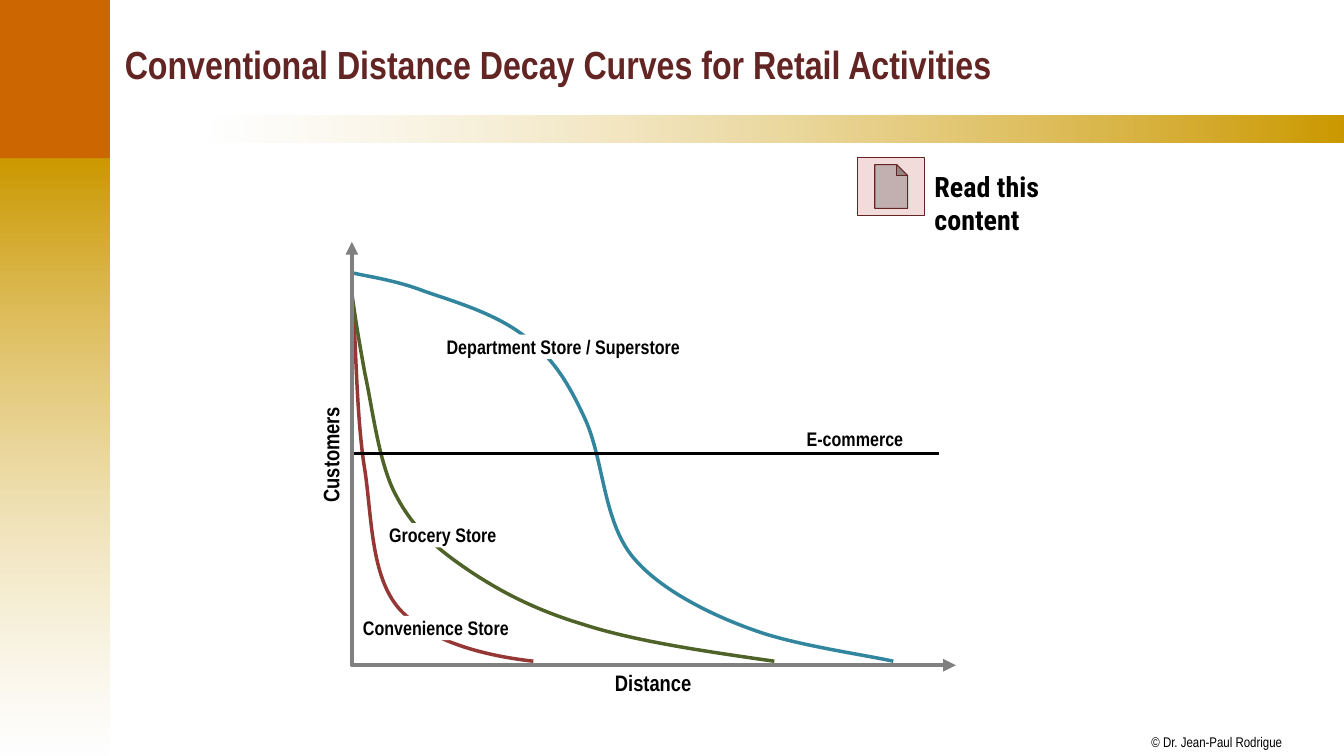
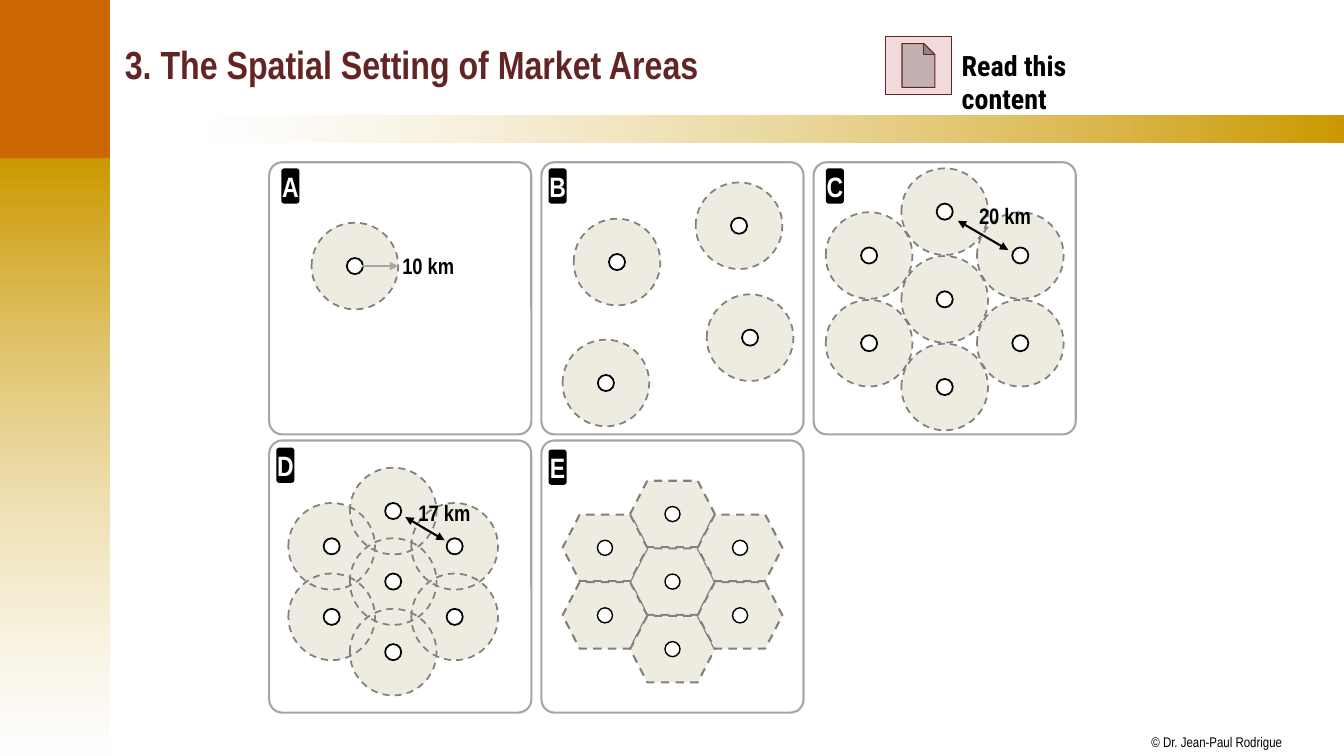
from dataclasses import dataclass
from typing import NamedTuple, Optional

import pptx
import pptx.dml.color
import pptx.enum.dml
import pptx.enum.shapes
import pptx.enum.text
import pptx.oxml
import pptx.oxml.ns
import pptx.slide
import pptx.util

Inches = pptx.util.Inches
Pt = pptx.util.Pt
qn = pptx.oxml.ns.qn
MSO_SHAPE = pptx.enum.shapes.MSO_SHAPE
ANCHOR = pptx.enum.text.MSO_ANCHOR
Slide = pptx.slide.Slide
Point = tuple[float, float]
Box = tuple[float, float, float, float]


@dataclass(frozen=True)
class Theme:
    font: str = "Arial Narrow"
    link_font: str = "Roboto Condensed"
    orange: str = "CC6600"
    gold: str = "CC9900"
    maroon: str = "632523"
    pink: str = "F2DCDB"
    black: str = "000000"
    white: str = "FFFFFF"
    area: str = "EEECE1"
    gray: str = "808080"
    light_gray: str = "A6A6A6"
    red: str = "953735"
    green: str = "4F6228"
    teal: str = "31859C"
    title_size: float = 28
    large_size: float = 20
    axis_size: float = 16
    label_size: float = 14
    footer_size: float = 10


THEME = Theme()


class Line(NamedTuple):
    color: str
    width: float
    dashed: bool = False
    head: bool = False
    tail: bool = False


class Label(NamedTuple):
    text: str
    box: Box
    size: float = THEME.axis_size
    fill: Optional[str] = None
    rotation: float = 0


class Curve(NamedTuple):
    """A start point followed by cubic Bézier points, three to a segment."""
    color: str
    points: list[Point]


class Panel(NamedTuple):
    letter: str
    column: int
    row: int
    badge_dx: float
    badge_dy: float


AREA_LINE = Line(THEME.gray, 1.25, dashed=True)
HEX_LINE = Line(THEME.gray, 1.5, dashed=True)
DISTANCE_LINE = Line(THEME.black, 1.5, head=True, tail=True)

CURVES = [
    Curve(THEME.red, [
        (3.51, 3.19), (3.53, 3.43), (3.54, 4.2), (3.62, 4.67),
        (3.69, 5.15), (3.68, 5.72), (3.96, 6.04),
        (4.24, 6.35), (4.76, 6.5), (5.29, 6.56)]),
    Curve(THEME.green, [
        (3.49, 2.91), (3.52, 3.14), (3.56, 3.38), (3.62, 3.71),
        (3.69, 4.03), (3.75, 4.54), (3.9, 4.86),
        (4.05, 5.17), (4.24, 5.37), (4.55, 5.59),
        (4.86, 5.81), (5.24, 6.03), (5.77, 6.19),
        (6.29, 6.36), (6.98, 6.46), (7.68, 6.56)]),
    Curve(THEME.teal, [
        (3.51, 2.71), (3.63, 2.74), (3.93, 2.78), (4.21, 2.89),
        (4.5, 2.99), (4.88, 3.1), (5.17, 3.31),
        (5.46, 3.53), (5.61, 3.74), (5.8, 4.15),
        (5.99, 4.56), (5.98, 5.17), (6.28, 5.53),
        (6.57, 5.88), (7.14, 6.14), (7.56, 6.28),
        (7.96, 6.41), (8.59, 6.5), (8.86, 6.56)]),
]
AXIS_LABELS = [
    Label("Distance", (6.1, 6.64, 0.76, 0.27)),
    Label("Customers", (2.8, 4.37, 0.96, 0.27), rotation=270),
]
CURVE_LABELS = [
    Label("Convenience Store", (3.6, 6.11, 1.46, 0.24), THEME.label_size, THEME.white),
    Label("Grocery Store", (3.86, 5.19, 1.07, 0.24), THEME.label_size, THEME.white),
    Label("Department Store / Superstore", (4.43, 3.32, 2.34, 0.24),
          THEME.label_size, THEME.white),
]
PANELS = [
    Panel("A", 0, 0, 0.12, 0.06),
    Panel("B", 1, 0, 0.07, 0.06),
    Panel("C", 2, 0, 0.12, 0.06),
    Panel("D", 0, 1, 0.07, 0.07),
    Panel("E", 1, 1, 0.07, 0.09),
]
SCATTERED = [(7.33, 2.24), (7.44, 3.35), (6.12, 2.6), (6.01, 3.8)]


def rgb(color: str) -> pptx.dml.color.RGBColor:
    return pptx.dml.color.RGBColor.from_string(color)


def style_line(sp, line: Optional[Line]) -> None:
    if line is None:
        sp.line.fill.background()
        return
    sp.line.color.rgb = rgb(line.color)
    sp.line.width = Pt(line.width)
    if line.dashed:
        sp.line.dash_style = pptx.enum.dml.MSO_LINE.DASH
    for tag, shown in (("a:headEnd", line.head), ("a:tailEnd", line.tail)):
        if shown:
            end = pptx.oxml.parse_xml(f"<{tag} {pptx.oxml.ns.nsdecls('a')} type='triangle'/>")
            sp.get_or_add_ln().append(end)


def style_shape(sp, fill: Optional[str], line: Optional[Line]) -> None:
    sp.shadow.inherit = False
    if fill:
        sp.fill.solid()
        sp.fill.fore_color.rgb = rgb(fill)
    else:
        sp.fill.background()
    style_line(sp, line)


def add_shape(s: Slide, kind, box: Box, fill: Optional[str] = None,
              line: Optional[Line] = None):
    sp = s.shapes.add_shape(kind, *map(Inches, box))
    style_shape(sp, fill, line)
    return sp


def add_outline(s: Slide, points: list[Point], fill: Optional[str], line: Line,
                close: bool = False):
    vertices = [(Inches(x), Inches(y)) for x, y in points]
    builder = s.shapes.build_freeform(*vertices[0])
    builder.add_line_segments(vertices[1:], close=close)
    sp = builder.convert_to_shape()
    style_shape(sp, fill, line)
    return sp


def add_curve(s: Slide, curve: Curve) -> None:
    """Turn each three straight segments of an outline into one cubic segment."""
    sp = add_outline(s, curve.points, None, Line(curve.color, 2.5))
    segments = list(sp._element.iter(qn("a:lnTo")))
    for i in range(0, len(segments), 3):
        first, *others = segments[i:i + 3]
        first.tag = qn("a:cubicBezTo")
        for other in others:
            first.append(other[0])
            other.getparent().remove(other)


def add_straight(s: Slide, start: Point, end: Point, line: Line) -> None:
    kind = pptx.enum.shapes.MSO_CONNECTOR.STRAIGHT
    sp = s.shapes.add_connector(kind, *map(Inches, start + end))
    style_line(sp, line)
    effects = pptx.oxml.parse_xml(f"<a:effectLst {pptx.oxml.ns.nsdecls('a')}/>")
    sp._element.spPr.append(effects)


def set_text(sp, text: str, size: float, color: str = THEME.black,
             font: str = THEME.font, bold: bool = True):
    p = sp.text_frame.paragraphs[0]
    p.text = text
    p.font.name, p.font.size, p.font.bold = font, Pt(size), bold
    p.font.color.rgb = rgb(color)
    return p


def fit_tightly(sp) -> None:
    """Remove insets and wrapping, and let the shape follow its text."""
    tf = sp.text_frame
    tf.margin_left = tf.margin_top = tf.margin_right = tf.margin_bottom = 0
    tf.word_wrap = False
    tf.auto_size = pptx.enum.text.MSO_AUTO_SIZE.SHAPE_TO_FIT_TEXT


def add_label(s: Slide, label: Label, bold: bool = True) -> None:
    sp = s.shapes.add_textbox(*map(Inches, label.box))
    if label.fill:
        sp.fill.solid()
        sp.fill.fore_color.rgb = rgb(label.fill)
    sp.rotation = label.rotation
    fit_tightly(sp)
    set_text(sp, label.text, label.size, bold=bold)


def add_gradient(s: Slide, box: Box, angle: float, stops: list[tuple[str, int]]) -> None:
    """Draw a two-stop band; each stop is a colour and its opacity in percent."""
    sp = add_shape(s, MSO_SHAPE.RECTANGLE, box)
    sp.fill.gradient()
    sp.fill.gradient_angle = angle
    for stop, gs, (color, opacity) in zip(
            sp.fill.gradient_stops, sp._element.iter(qn("a:gs")), stops):
        stop.color.rgb = rgb(color)
        if opacity < 100:
            gs[0].append(pptx.oxml.parse_xml(
                f"<a:alpha {pptx.oxml.ns.nsdecls('a')} val='{opacity * 1000}'/>"))


def add_titled_slide(prs, title: str) -> Slide:
    s = prs.slides.add_slide(prs.slide_layouts[6])
    add_gradient(s, (-0.02, 1.57, 1.11, 5.93), 270, [(THEME.gold, 100), (THEME.white, 51)])
    add_gradient(s, (2.09, 1.15, 11.25, 0.26), 0, [(THEME.white, 50), (THEME.gold, 100)])
    add_label(s, Label("© Dr. Jean-Paul Rodrigue", (11.42, 7.28, 1.31, 0.17),
                       THEME.footer_size), bold=False)
    add_shape(s, MSO_SHAPE.RECTANGLE, (-0.02, -0.01, 1.11, 1.58), THEME.orange)
    sp = s.shapes.add_textbox(*map(Inches, (1.14, 0.11, 11.97, 1.04)))
    sp.text_frame.word_wrap = True
    sp.text_frame.vertical_anchor = ANCHOR.MIDDLE
    set_text(sp, title, THEME.title_size, THEME.maroon)
    return s


def add_read_button(s: Slide, x: float, y: float) -> None:
    add_shape(s, MSO_SHAPE.ACTION_BUTTON_DOCUMENT, (x, y, 0.66, 0.58),
              THEME.pink, Line(THEME.maroon, 0.75))
    sp = s.shapes.add_textbox(*map(Inches, (x + 0.66, y + 0.07, 1.86, 0.44)))
    sp.text_frame.word_wrap = True
    set_text(sp, "Read this content", THEME.large_size, font=THEME.link_font)


def add_circle(s: Slide, center: Point, size: float, fill: Optional[str],
               line: Optional[Line]) -> None:
    x, y = center
    add_shape(s, MSO_SHAPE.OVAL, (x - size / 2, y - size / 2, size, size), fill, line)


def add_market(s: Slide, center: Point, fill: Optional[str] = THEME.area) -> None:
    add_circle(s, center, 0.86, fill, AREA_LINE)
    add_circle(s, center, 0.16, THEME.white, Line(THEME.black, 1.25))


def add_hexagon_market(s: Slide, center: Point) -> None:
    x, y = center
    corners = [(-0.25, -0.33), (-0.42, 0), (-0.25, 0.33), (0.25, 0.33), (0.42, 0), (0.25, -0.33)]
    add_outline(s, [(x + dx, y + dy) for dx, dy in corners], THEME.area, HEX_LINE, close=True)
    add_circle(s, center, 0.15, THEME.white, Line(THEME.black, 1))


def ring_of_six(center: Point, dx: float, dy: float) -> list[Point]:
    """Centres of a middle market and its six neighbours."""
    x, y = center
    steps = [(0, -1), (0, 0), (-1, -0.5), (-1, 0.5), (0, 1), (1, 0.5), (1, -0.5)]
    return [(x + column * dx, y + row * dy) for column, row in steps]


def add_panel(s: Slide, panel: Panel) -> None:
    x, y = 2.67 + 2.7 * panel.column, 1.61 + 2.76 * panel.row
    sp = add_shape(s, MSO_SHAPE.ROUNDED_RECTANGLE, (x, y, 2.6, 2.7),
                   line=Line(THEME.light_gray, 1.5))
    sp.adjustments[0] = 0.05
    badge = add_shape(s, MSO_SHAPE.ROUNDED_RECTANGLE,
                      (x + panel.badge_dx, y + panel.badge_dy, 0.18, 0.35), THEME.black)
    fit_tightly(badge)
    p = set_text(badge, panel.letter, THEME.large_size, THEME.white)
    p.alignment = pptx.enum.text.PP_ALIGN.CENTER


def build_decay_curves(prs) -> None:
    s = add_titled_slide(prs, "Conventional Distance Decay Curves for Retail Activities")
    add_read_button(s, 8.51, 1.56)
    for label in AXIS_LABELS:
        add_label(s, label)
    for curve in CURVES:
        add_curve(s, curve)
    add_outline(s, [(3.49, 2.4), (3.49, 6.6), (9.48, 6.6)], None,
                Line(THEME.gray, 3, head=True, tail=True))
    for label in CURVE_LABELS:
        add_label(s, label)
    add_straight(s, (3.51, 4.5), (9.31, 4.5), Line(THEME.black, 2.5))
    add_label(s, Label("E-commerce", (8, 4.24, 0.97, 0.24), THEME.label_size))


def build_market_areas(prs) -> None:
    s = add_titled_slide(prs, "3. The Spatial Setting of Market Areas")
    add_read_button(s, 8.78, 0.36)
    overlapping = ring_of_six((3.9, 5.77), 0.61, 0.7)
    for center in overlapping:
        add_circle(s, center, 0.86, THEME.area, None)
    for center in overlapping:
        add_market(s, center, fill=None)
    for center in SCATTERED + [(3.52, 2.64)] + ring_of_six((9.37, 2.97), 0.75, 0.87):
        add_market(s, center)
    for center in ring_of_six((6.67, 5.77), 0.67, 0.67):
        add_hexagon_market(s, center)
    add_straight(s, (3.59, 2.64), (3.95, 2.64), Line(THEME.light_gray, 1.5, tail=True))
    add_straight(s, (9.5, 2.19), (10, 2.48), DISTANCE_LINE)
    add_straight(s, (4.02, 5.13), (4.41, 5.36), DISTANCE_LINE)
    for text, x, y in (("10 km", 3.99, 2.5), ("20 km", 9.71, 2.01), ("17 km", 4.15, 4.95)):
        add_label(s, Label(text, (x, y, 0.52, 0.27)))
    for panel in PANELS:
        add_panel(s, panel)


def main() -> None:
    prs = pptx.Presentation()
    prs.slide_width, prs.slide_height = Inches(13.33), Inches(7.5)
    build_decay_curves(prs)
    build_market_areas(prs)
    prs.save("out.pptx")


if __name__ == "__main__":
    main()
